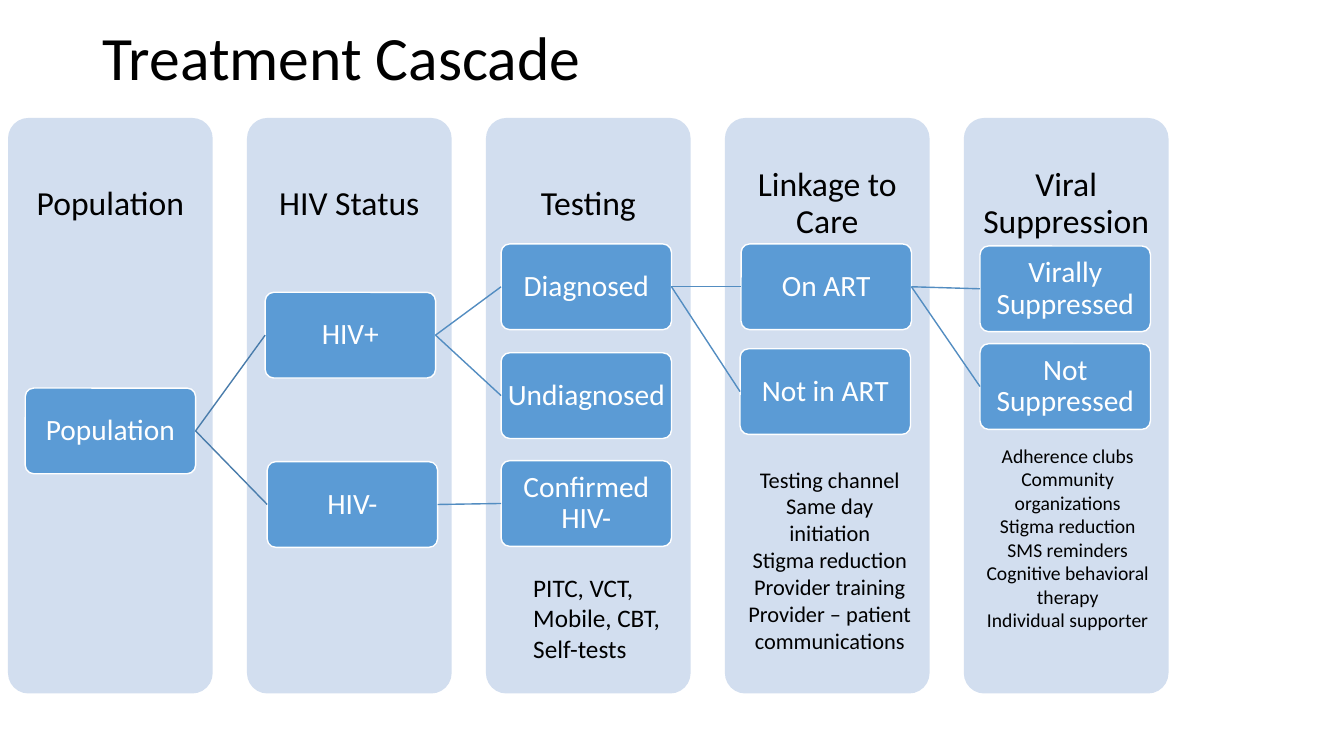
from lxml import etree
from pptx import Presentation
from pptx import util as u
from pptx.dml.color import RGBColor
from pptx.enum import shapes, text
from pptx.oxml.ns import qn

PX = 9144  # 100 px to the inch
FONT = "Calibri"
BLACK = RGBColor(0x00, 0x00, 0x00)
WHITE = RGBColor(0xFF, 0xFF, 0xFF)
PALE_BLUE = RGBColor(0xD2, 0xDE, 0xEF)
BLUE = RGBColor(0x5B, 0x9B, 0xD5)
DARK_LINK = RGBColor(0x49, 0x7C, 0xAB)
LINK = RGBColor(0x53, 0x8D, 0xC1)
LEFT, CENTER = text.PP_ALIGN.LEFT, text.PP_ALIGN.CENTER
TOP, MIDDLE = text.MSO_ANCHOR.TOP, text.MSO_ANCHOR.MIDDLE

COLUMN_TOP, COLUMN_WIDTH, COLUMN_HEIGHT, COLUMN_PITCH = 117, 203, 571, 237
HEADING_HEIGHT = 171
STAGE_WIDTH, STAGE_HEIGHT = 169, 85

# heading, then (label, offset from the column's left, offset from its top)
COLUMNS = [
    ("Population", [("Population", 17, 268)]),
    ("HIV Status", [("HIV+", 18, 173), ("HIV-", 20, 341)]),
    ("Testing", [("Diagnosed", 15, 125), ("Undiagnosed", 15, 233),
                 ("Confirmed HIV-", 15, 340)]),
    ("Linkage to Care", [("On ART", 16, 125), ("Not in ART", 15, 229)]),
    ("Viral Suppression", [("Virally Suppressed", 16, 127),
                           ("Not Suppressed", 16, 224)]),
]
LINKS = [
    ("Population", "HIV+", DARK_LINK),
    ("Population", "HIV-", DARK_LINK),
    ("HIV+", "Diagnosed", LINK),
    ("HIV+", "Undiagnosed", LINK),
    ("HIV-", "Confirmed HIV-", LINK),
    ("Diagnosed", "On ART", LINK),
    ("Diagnosed", "Not in ART", LINK),
    ("On ART", "Virally Suppressed", LINK),
    ("On ART", "Not Suppressed", LINK),
]
# box, font size, alignment, lines
NOTES = [
    ((519, 563, 161, 101), 18, LEFT,
     ["PITC, VCT,", "Mobile, CBT,", "Self-tests"]),
    ((728, 457, 190, 229), 16, CENTER,
     ["Testing channel", "Same day initiation", "Stigma reduction",
      "Provider training", "Provider – patient communications"]),
    ((964, 435, 190, 229), 14, CENTER,
     ["Adherence clubs", "Community organizations", "Stigma reduction",
      "SMS reminders", "Cognitive behavioral therapy",
      "Individual supporter"]),
]


def emu(box):
    return [u.Emu(length * PX) for length in box]


def write(shape, lines, size, color=BLACK, align=LEFT, anchor=MIDDLE,
          spacing=0.9, inset=(10, 5)):
    frame = shape.text_frame
    frame.word_wrap = True
    frame.vertical_anchor = anchor
    frame.margin_left = frame.margin_right = u.Emu(inset[0] * PX)
    frame.margin_top = frame.margin_bottom = u.Emu(inset[1] * PX)
    frame.text = "\n".join(lines)
    for paragraph in frame.paragraphs:
        paragraph.alignment = align
        paragraph.line_spacing = spacing
        paragraph.font.name = FONT
        paragraph.font.size = u.Pt(size)
        paragraph.font.color.rgb = color


def add_rounded(slide, box, fill):
    card = slide.shapes.add_shape(
        shapes.MSO_SHAPE.ROUNDED_RECTANGLE, *emu(box))
    card.adjustments[0] = 0.1
    card.shadow.inherit = False
    card.fill.solid()
    card.fill.fore_color.rgb = fill
    return card


def add_title(slide, box, title):
    write(slide.shapes.add_textbox(*emu(box)), [title], 44)


def add_stage(slide, box, label):
    stage = add_rounded(slide, box, BLUE)
    stage.line.color.rgb = WHITE
    stage.line.width = u.Pt(1)
    write(stage, [label], 21, WHITE, CENTER, inset=(3, 3))
    return stage


def add_column(slide, box, heading, stages):
    """Draw a column with its heading and return its stages by label."""
    left, top, width, _ = box
    add_rounded(slide, box, PALE_BLUE).line.fill.background()
    heading_box = slide.shapes.add_textbox(
        *emu((left, top, width, HEADING_HEIGHT)))
    write(heading_box, [heading], 24, align=CENTER, inset=(19, 19))
    return {
        label: add_stage(
            slide, (left + dx, top + dy, STAGE_WIDTH, STAGE_HEIGHT), label)
        for label, dx, dy in stages
    }


def add_link(slide, source, target, color):
    link = slide.shapes.add_connector(
        shapes.MSO_CONNECTOR.STRAIGHT, 0, 0, 0, 0)
    link.begin_connect(source, 3)
    link.end_connect(target, 1)
    link.line.color.rgb = color
    link.line.width = u.Pt(1)
    etree.SubElement(link._element.spPr, qn("a:effectLst"))


def add_note(slide, box, size, align, lines):
    write(slide.shapes.add_textbox(*emu(box)), lines, size,
          align=align, anchor=TOP, spacing=1.0)


def add_cascade(slide, left, top):
    stages = {}
    for index, (heading, column_stages) in enumerate(COLUMNS):
        box = (left + index * COLUMN_PITCH, top, COLUMN_WIDTH, COLUMN_HEIGHT)
        stages.update(add_column(slide, box, heading, column_stages))
    for source, target, color in LINKS:
        add_link(slide, stages[source], stages[target], color)


def main():
    deck = Presentation()
    deck.slide_width, deck.slide_height = emu((1333, 750))
    slide = deck.slides.add_slide(deck.slide_layouts[6])
    add_title(slide, (92, 14, 1150, 92), "Treatment Cascade")
    add_cascade(slide, 8, COLUMN_TOP)
    for note in NOTES:
        add_note(slide, *note)
    deck.save("out.pptx")


if __name__ == "__main__":
    main()
